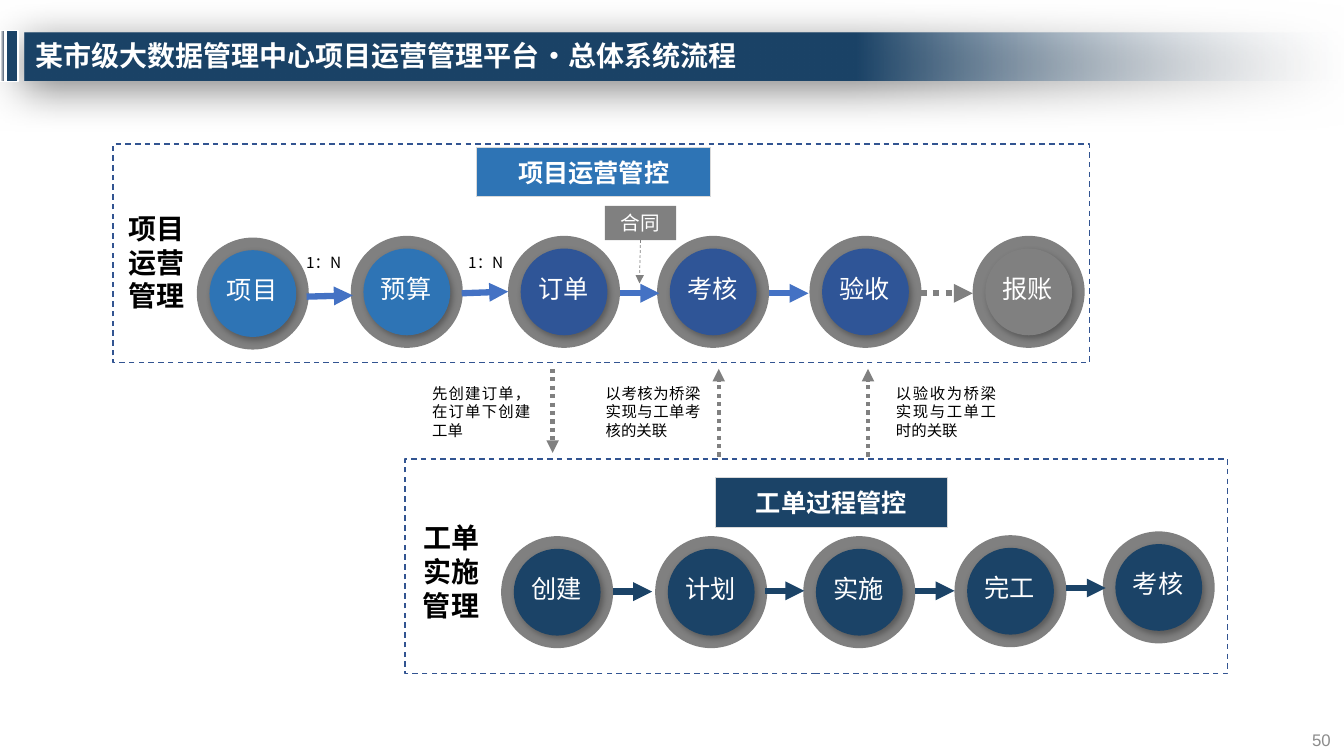
from lxml.etree import SubElement
from pptx import Presentation
from pptx.dml.color import RGBColor
from pptx.enum.dml import MSO_LINE
from pptx.enum.shapes import MSO_CONNECTOR, MSO_SHAPE
from pptx.enum.text import MSO_ANCHOR as ANCHOR, PP_ALIGN as ALIGN
from pptx.oxml.ns import qn
from pptx.util import Pt

NAVY = RGBColor(0x1B, 0x43, 0x67)
BLUE = RGBColor(0x2E, 0x74, 0xB5)
INDIGO = RGBColor(0x2F, 0x55, 0x97)
ARROW_BLUE = RGBColor(0x44, 0x72, 0xC4)
FRAME_BLUE = RGBColor(0x32, 0x54, 0x91)
SLATE = RGBColor(0x44, 0x54, 0x6A)
GREY = RGBColor(0x80, 0x80, 0x80)
NUMBER_GREY = RGBColor(0x8C, 0x8C, 0x8C)
EDGE_GREY = RGBColor(0xD9, 0xD9, 0xD9)
PALE = RGBColor(0xF2, 0xF2, 0xF2)
MIST = RGBColor(0xF6, 0xF8, 0xFC)
WHITE = RGBColor(0xFF, 0xFF, 0xFF)
BLACK = RGBColor(0, 0, 0)
FONT = "Noto Sans CJK SC"

RING, DISC = 80, 62
DISC_INSET = (RING - DISC) / 2


def write(shape, text, size, color, bold=False, align=ALIGN.CENTER,
          anchor=ANCHOR.TOP, font=FONT):
    frame = shape.text_frame
    frame.word_wrap = True
    frame.vertical_anchor = anchor
    paragraph = frame.paragraphs[0]
    paragraph.alignment = align
    run = paragraph.add_run()
    run.text = text
    run.font.size = Pt(size)
    run.font.bold = bold
    run.font.color.rgb = color
    run.font.name = font
    SubElement(run.font._element, qn("a:ea"), typeface=font)
    return paragraph


def add_text(slide, box, text, size, color, **style):
    label = slide.shapes.add_textbox(*map(Pt, box))
    return write(label, text, size, color, **style)


def add_block(slide, box, fill=None, edge=None, width=1, kind=MSO_SHAPE.RECTANGLE):
    block = slide.shapes.add_shape(kind, *map(Pt, box))
    block.shadow.inherit = False
    if fill is None:
        block.fill.background()
    else:
        block.fill.solid()
        block.fill.fore_color.rgb = fill
    if edge is None:
        block.line.fill.background()
    else:
        block.line.color.rgb = edge
        block.line.width = Pt(width)
    return block


def fade(block, *stops):
    """Fill a block from left to right with two (position, colour) stops."""
    block.fill.gradient()
    block.fill.gradient_angle = 0
    for stop, (position, color) in zip(block.fill.gradient_stops, stops):
        stop.position = position
        stop.color.rgb = color


def cast_shadow(block, opacity, blur, distance, angle):
    effects = block._element.spPr.find(qn("a:effectLst"))
    shadow = SubElement(effects, qn("a:outerShdw"), blurRad=str(Pt(blur)),
                        dist=str(Pt(distance)), dir=str(angle * 60000),
                        algn="ctr", rotWithShape="0")
    black = SubElement(shadow, qn("a:srgbClr"), val="000000")
    SubElement(black, qn("a:alpha"), val=str(opacity * 1000))


def add_arrow(slide, ends, color, width, dash=None):
    arrow = slide.shapes.add_connector(MSO_CONNECTOR.STRAIGHT, *map(Pt, ends))
    arrow.line.color.rgb = color
    arrow.line.width = Pt(width)
    if dash is not None:
        arrow.line.dash_style = dash
    SubElement(arrow.line._get_or_add_ln(), qn("a:tailEnd"), type="triangle")
    SubElement(arrow._element.spPr, qn("a:effectLst"))
    return arrow


def add_step(slide, left, top, name, color):
    add_block(slide, (left, top, RING, RING), GREY, kind=MSO_SHAPE.OVAL)
    disc = add_block(slide, (left + DISC_INSET, top + DISC_INSET, DISC, DISC),
                     color, kind=MSO_SHAPE.OVAL)
    cast_shadow(disc, 30, 4.5, 2.6, 53)
    add_text(slide, (left + 13, top + 23, 53, 29), name, 18, WHITE)


def add_stage(slide, frame, banner, banner_text, banner_color, side, side_text):
    outline = add_block(slide, frame, edge=FRAME_BLUE)
    outline.line.dash_style = MSO_LINE.DASH
    heading = add_block(slide, banner, banner_color, EDGE_GREY, 0.75)
    write(heading, banner_text, 18, WHITE, bold=True, anchor=ANCHOR.MIDDLE)
    add_text(slide, side, side_text, 20, BLACK, bold=True)


def add_header(slide):
    bar = add_block(slide, (17.3, 23.2, 942.7, 34), NAVY)
    fade(bar, (0.63, NAVY), (1, MIST))
    clear_end = bar._element.spPr.findall(".//" + qn("a:srgbClr"))[-1]
    SubElement(clear_end, qn("a:alpha"), val="0")
    cast_shadow(bar, 50, 31, 6, 97)
    add_block(slide, (4.3, 21.6, 8.7, 36.7), NAVY, WHITE)
    stripe = add_block(slide, (0, 21.6, 3.6, 36.7), SLATE, WHITE)
    fade(stripe, (0.12, PALE), (0.87, SLATE))
    title = add_text(slide, (18, 24.5, 878, 33),
                     "某市级大数据管理中心项目运营管理平台·总体系统流程", 20, WHITE,
                     bold=True, align=ALIGN.LEFT, anchor=ANCHOR.MIDDLE)
    title.line_spacing = 0.9


def main():
    prs = Presentation()
    prs.slide_width, prs.slide_height = Pt(960), Pt(540)
    slide = prs.slides.add_slide(prs.slide_layouts[6])
    add_header(slide)

    # Stage frames with their headings
    add_stage(slide, (80.6, 103, 697.7, 156.2), (340.6, 105.5, 167, 35),
              "项目运营管控", BLUE, (80.6, 147.6, 62.6, 80), "项目运营管理")
    add_stage(slide, (289.4, 327.8, 587.5, 153.4), (511.2, 341.3, 165.6, 35.3),
              "工单过程管控", NAVY, (290.2, 368.6, 64, 80), "工单实施管理")

    # Steps of both stages
    for left, top, name, color in (
            (140.6, 169.7, "项目", BLUE), (250.6, 168.5, "预算", BLUE),
            (362.9, 168.5, "订单", INDIGO), (469.4, 168.5, "考核", INDIGO),
            (578.2, 168.5, "验收", INDIGO), (694.8, 168.5, "报账", GREY),
            (358, 383, "创建", NAVY), (468, 383, "计划", NAVY),
            (573.8, 383, "实施", NAVY), (681.8, 382.3, "完工", NAVY),
            (787.7, 379.6, "考核", NAVY)):
        add_step(slide, left, top, name, color)

    # Arrows between steps
    for ends in ((219, 211.9, 252, 211), (329.8, 209.5, 363, 208.3),
                 (442.8, 209.5, 471, 209.5), (549.4, 209.5, 577.5, 209.5)):
        add_arrow(slide, ends, ARROW_BLUE, 4.5)
    add_arrow(slide, (657.4, 209.5, 694.8, 209.5), GREY, 4.5, MSO_LINE.ROUND_DOT)
    for left, y in ((437.8, 422.6), (546.5, 422), (653.8, 422), (761.8, 420)):
        add_arrow(slide, (left, y, left + 28, y), NAVY, 4.5)
    for left in (203.8, 319.7):
        add_text(slide, (left, 177, 54.7, 21), "1：N", 11, BLACK)

    # Contract tag
    contract = add_block(slide, (432, 147, 51, 24.5), GREY)
    write(contract, "合同", 14, WHITE, anchor=ANCHOR.MIDDLE)
    drop = add_arrow(slide, (457.5, 171.5, 456.8, 202.5), GREY, 0.5, MSO_LINE.DASH)
    drop.begin_connect(contract, 2)

    # Links between the two stages
    for x, start, end in ((394.7, 263.5, 323.5)[::1][0:1] + (263.5, 323.5),
                          (513.4, 326.2, 263.5), (620, 326.2, 263.5)):
        add_arrow(slide, (x, start, x, end), GREY, 3, MSO_LINE.ROUND_DOT)
    for left, width, note in (
            (301.7, 84.2, "先创建订单，在订单下创建工单"),
            (425.5, 82, "以考核为桥梁实现与工单考核的关联"),
            (632.9, 85.7, "以验收为桥梁实现与工单工时的关联")):
        add_text(slide, (left, 270.7, width, 47.5), note, 11, BLACK,
                 align=ALIGN.JUSTIFY)

    # Slide number
    add_text(slide, (910.8, 516.2, 46.8, 24), "50", 12, NUMBER_GREY,
             align=ALIGN.RIGHT, anchor=ANCHOR.MIDDLE, font="Arial")
    prs.save("out.pptx")


if __name__ == "__main__":
    main()
